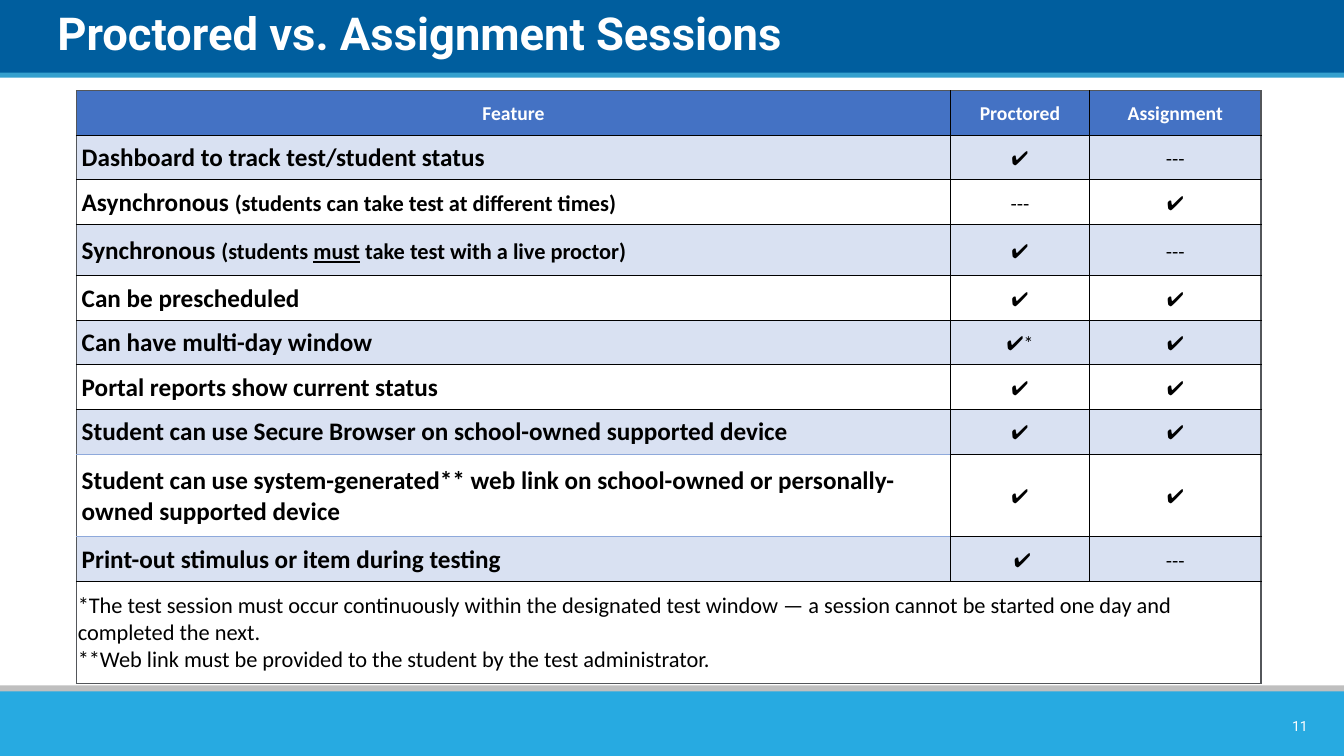
from dataclasses import dataclass

from lxml import etree
from pptx import Presentation
from pptx import util as u
from pptx.dml.color import RGBColor
from pptx.enum import shapes, text
from pptx.oxml import ns

WHITE = RGBColor(0xFF, 0xFF, 0xFF)
BLACK = RGBColor(0x00, 0x00, 0x00)
NAVY = RGBColor(0x00, 0x5E, 0x9E)
SKY = RGBColor(0x35, 0xA0, 0xCE)
SILVER = RGBColor(0xBF, 0xBF, 0xBF)
CYAN = RGBColor(0x27, 0xAA, 0xE1)
HEADER_BLUE = RGBColor(0x44, 0x72, 0xC4)
ROW_BLUE = RGBColor(0xD9, 0xE1, 0xF2)
RULE_BLUE = RGBColor(0x8E, 0xA9, 0xDB)
EDGE_GREY = RGBColor(0x53, 0x56, 0x5A)

SLIDE_WIDTH = 33.87
COLUMN_WIDTHS = (22.02, 3.51, 4.32)
ROW_HEIGHT = 1.12
YES, NO = "✔", "---"
LEFT, CENTER = text.PP_ALIGN.LEFT, text.PP_ALIGN.CENTER


@dataclass(frozen=True)
class Band:
    top: float
    height: float
    color: RGBColor


@dataclass(frozen=True)
class Span:
    text: str
    size: float
    font: str = "Calibri"
    bold: bool = False
    underline: bool = False
    color: RGBColor = BLACK


@dataclass(frozen=True)
class Feature:
    label: tuple[Span, ...]
    proctored: tuple[Span, ...]
    assignment: tuple[Span, ...]
    height: float = ROW_HEIGHT


def name(label: str) -> Span:
    return Span(label, 18, bold=True)


def detail(label: str, underline: bool = False) -> Span:
    return Span(label, 16, bold=True, underline=underline)


def heading(label: str) -> tuple[Span, ...]:
    return (Span(label, 14, bold=True, color=WHITE),)


def mark(label: str) -> Span:
    return Span(label, 14, "Open Sans")


BANDS = (
    Band(-0.03, 1.9, NAVY),
    Band(1.83, 0.13, SKY),
    Band(17.27, 0.36, SILVER),
    Band(17.42, 1.63, CYAN),
)

FEATURES = (
    Feature((name("Dashboard to track test/student status"),), (mark(YES),), (mark(NO),)),
    Feature((name("Asynchronous "), detail("(students can take test at different times)")),
            (mark(NO),), (mark(YES),)),
    Feature((name("Synchronous "), detail("(students "), detail("must", True),
             detail(" take test with a live proctor)")), (mark(YES),), (mark(NO),), 1.3),
    Feature((name("Can be prescheduled"),), (mark(YES),), (mark(YES),)),
    Feature((name("Can have multi-day window"),), (mark(YES), Span("*", 14)), (mark(YES),)),
    Feature((name("Portal reports show current status"),), (mark(YES),), (mark(YES),)),
    Feature((name("Student can use Secure Browser on school-owned supported device"),),
            (mark(YES),), (mark(YES),), 1.14),
    Feature((name("Student can use system-generated** web link on school-owned or "
                  "personally-owned supported device"),), (mark(YES),), (mark(YES),), 2.08),
    Feature((name("Print-out stimulus or item during testing"),), (mark(" " + YES),), (mark(NO),)),
)
WEB_LINK_ROW = 8
NOTE_ROW = len(FEATURES) + 1
NOTE_HEIGHT = 2.57
NOTE = ("*The test session must occur continuously within the designated test window — "
        "a session cannot be started one day and completed the next.\n"
        "**Web link must be provided to the student by the test administrator.")


def format_run(run, span: Span) -> None:
    run.font.name = span.font
    run.font.size = u.Pt(span.size)
    run.font.bold = span.bold
    run.font.underline = span.underline
    run.font.color.rgb = span.color


def write(frame, spans: tuple[Span, ...], align) -> None:
    para = frame.paragraphs[0]
    para.alignment = align
    for span in spans:
        run = para.add_run()
        run.text = span.text
        format_run(run, span)


def draw_band(page, band: Band) -> None:
    box = page.shapes.add_shape(shapes.MSO_SHAPE.RECTANGLE, 0, u.Cm(band.top),
                                u.Cm(SLIDE_WIDTH), u.Cm(band.height))
    box.shadow.inherit = False
    box.fill.solid()
    box.fill.fore_color.rgb = band.color
    box.line.fill.background()


def border_color(row: int, column: int, side: str) -> RGBColor:
    outer = {
        "L": column == 0 or row == NOTE_ROW,
        "R": column == len(COLUMN_WIDTHS) - 1 or row == NOTE_ROW,
        "T": row == 0,
        "B": row == NOTE_ROW,
    }
    if outer[side]:
        return EDGE_GREY
    line = {"T": row, "B": row + 1}.get(side)
    if column == 0 and line in (WEB_LINK_ROW, WEB_LINK_ROW + 1):
        return RULE_BLUE
    return BLACK


def draw_borders(cell, row: int, column: int) -> None:
    properties = cell._tc.get_or_add_tcPr()
    for position, side in enumerate("LRTB"):
        color = border_color(row, column, side)
        width = u.Pt(1 if color == EDGE_GREY else 0.75)
        line = etree.Element(ns.qn(f"a:ln{side}"), w=str(width))
        fill = etree.SubElement(line, ns.qn("a:solidFill"))
        etree.SubElement(fill, ns.qn("a:srgbClr"), val=str(color))
        properties.insert(position, line)


def format_cell(cell, row: int, column: int) -> None:
    is_label = column == 0 and 0 < row < NOTE_ROW
    cell.margin_left = u.Cm(0.13 if is_label else 0.03)
    cell.margin_right = cell.margin_top = u.Cm(0.03)
    cell.margin_bottom = 0
    cell.vertical_anchor = text.MSO_ANCHOR.MIDDLE
    cell.fill.solid()
    cell.fill.fore_color.rgb = HEADER_BLUE if row == 0 else ROW_BLUE if row % 2 else WHITE
    draw_borders(cell, row, column)


def draw_table(page) -> None:
    header = Feature(heading("Feature"), heading("Proctored"), heading("Assignment"))
    rows = (header, *FEATURES)
    heights = [feature.height for feature in rows] + [NOTE_HEIGHT]
    table = page.shapes.add_table(len(heights), len(COLUMN_WIDTHS), u.Cm(1.93), u.Cm(2.29),
                                  u.Cm(sum(COLUMN_WIDTHS)), u.Cm(sum(heights))).table
    table.first_row = table.horz_banding = False
    for column, width in zip(table.columns, COLUMN_WIDTHS):
        column.width = u.Cm(width)
    for row, height in enumerate(heights):
        table.rows[row].height = u.Cm(height)
        for column in range(len(COLUMN_WIDTHS)):
            format_cell(table.cell(row, column), row, column)
    for row, feature in enumerate(rows):
        for column, spans in enumerate((feature.label, feature.proctored, feature.assignment)):
            align = LEFT if row and column == 0 else CENTER
            write(table.cell(row, column).text_frame, spans, align)
    note = table.cell(NOTE_ROW, 0)
    note.merge(table.cell(NOTE_ROW, len(COLUMN_WIDTHS) - 1))
    para = note.text_frame.paragraphs[0]
    para.text = NOTE
    for run in para.runs:
        format_run(run, Span(run.text, 16))


def draw_title(page) -> None:
    title = page.shapes.title
    title.element.getparent().append(title.element)
    title.left, title.top = u.Cm(1.19), u.Cm(0.18)
    title.width, title.height = u.Cm(31.57), u.Cm(1.45)
    frame = title.text_frame
    frame.auto_size = text.MSO_AUTO_SIZE.NONE
    frame.vertical_anchor = text.MSO_ANCHOR.MIDDLE
    write(frame, (Span("Proctored vs. Assignment Sessions", 32.4, "Roboto", True, color=WHITE),), LEFT)
    frame.paragraphs[0].line_spacing = 0.9


def draw_page_number(page) -> None:
    box = page.shapes.add_textbox(u.Cm(31.78), u.Cm(17.91), u.Cm(1.96), u.Cm(0.76))
    box.text_frame.word_wrap = True
    box.text_frame.vertical_anchor = text.MSO_ANCHOR.MIDDLE
    write(box.text_frame, (Span("11", 10, "Roboto", color=WHITE),), CENTER)


def main() -> None:
    deck = Presentation()
    deck.slide_width, deck.slide_height = u.Cm(SLIDE_WIDTH), u.Cm(19.05)
    page = deck.slides.add_slide(deck.slide_layouts[5])
    for band in BANDS:
        draw_band(page, band)
    draw_page_number(page)
    draw_title(page)
    draw_table(page)
    deck.save("out.pptx")


if __name__ == "__main__":
    main()
